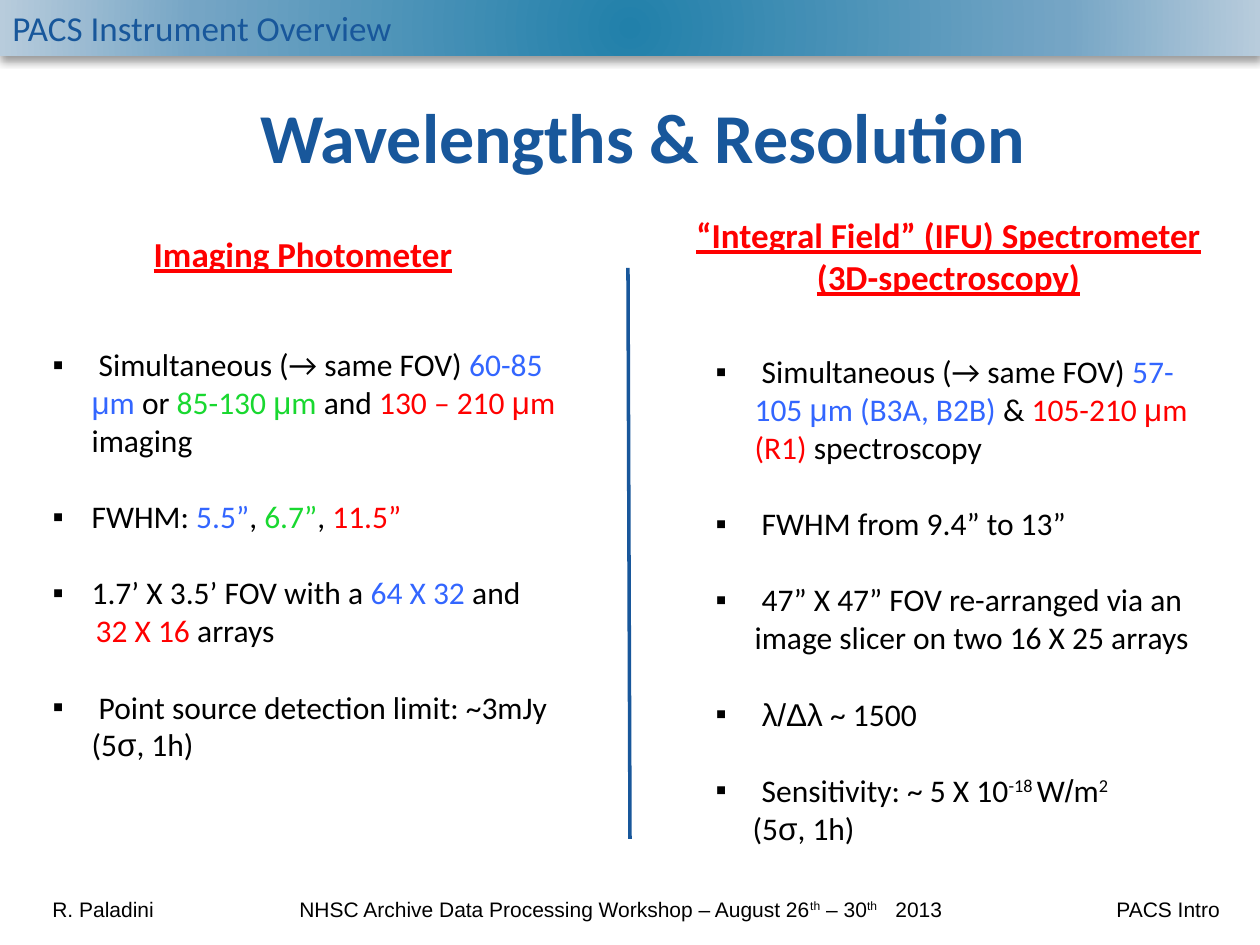
import itertools
from dataclasses import dataclass

import lxml.etree
import pptx
import pptx.dml.color
import pptx.enum.shapes
import pptx.enum.text
import pptx.oxml
import pptx.oxml.ns
import pptx.util


@dataclass(frozen=True)
class Theme:
    navy: str = "18579B"
    black: str = "000000"
    red: str = "FF0000"
    blue: str = "3366FF"
    green: str = "19D830"
    bar: tuple = ((0, "2180AA"), (69, "75A5C5"), (100, "B8CCDC"))
    text_font: str = "Calibri"
    plain_font: str = "Arial"
    title_size: int = 40
    heading_size: int = 20
    body_size: int = 18
    footer_size: int = 12
    item_gap: int = 22


THEME = Theme()
PX = 914400 / 126  # EMU in one px
SYMBOLS = set("μσλΔ/")  # set in the plain font
INDENT = 39


def px(length):
    return round(length * PX)


def rgb(code):
    return pptx.dml.color.RGBColor.from_string(code)


def xml(markup):
    namespaces = pptx.oxml.ns.nsdecls("a")
    return pptx.oxml.parse_xml(markup.replace(">", f" {namespaces}>", 1))


class SlideBuilder:
    def __init__(self, page, theme):
        self.page = page
        self.theme = theme

    def place(self, box, left, top, width, height, wrap=True):
        box.left, box.top, box.width, box.height = map(px, (left, top, width, height))
        frame = box.text_frame
        frame.word_wrap = wrap
        frame.auto_size = pptx.enum.text.MSO_AUTO_SIZE.NONE
        frame.vertical_anchor = pptx.enum.text.MSO_ANCHOR.TOP
        return frame

    def style(self, para, size, color, name=None, bold=False, underline=False, gap=0):
        font = para.font
        font.name = name or self.theme.text_font
        font.size = pptx.util.Pt(size)
        font.bold, font.underline = bold, underline
        font.color.rgb = rgb(color)
        para.space_before = pptx.util.Pt(gap)

    def spans(self, para, parts):
        """Each part is (text, colour or None, raised)."""
        for text, color, raised in parts:
            for symbol, letters in itertools.groupby(text, lambda c: c in SYMBOLS):
                span = para.add_run()
                span.text = "".join(letters)
                if symbol:
                    span.font.name = self.theme.plain_font
                if color:
                    span.font.color.rgb = rgb(color)
                if raised:
                    span._r.get_or_add_rPr().set("baseline", "30000")

    def paragraphs(self, frame, count):
        return [frame.paragraphs[0]] + [frame.add_paragraph() for _ in range(count - 1)]

    def heading(self, index, area, lines, size, color, underline=False, wrap=True):
        frame = self.place(self.page.placeholders[index], *area, wrap=wrap)
        for para, line in zip(self.paragraphs(frame, len(lines)), lines):
            para.text = line
            para.alignment = pptx.enum.text.PP_ALIGN.CENTER
            self.style(para, size, color, bold=True, underline=underline)

    def bullets(self, index, area, items):
        """Each item is (indent of an unbulleted line or None, parts)."""
        frame = self.place(self.page.placeholders[index], *area)
        for number, (para, (indent, parts)) in enumerate(
                zip(self.paragraphs(frame, len(items)), items)):
            bulleted = indent is None
            props = para._p.get_or_add_pPr()
            props.set("marL", str(px(INDENT if bulleted else indent)))
            props.set("indent", str(px(-INDENT if bulleted else 0)))
            if bulleted:
                props.append(xml(f'<a:buFont typeface="{self.theme.plain_font}"/>'.replace("/>", "></a:buFont>")))
                props.append(xml('<a:buChar char="▪"></a:buChar>'))
            else:
                props.append(xml("<a:buNone></a:buNone>"))
            gap = self.theme.item_gap if bulleted and number else 0
            self.style(para, self.theme.body_size, self.theme.black, gap=gap)
            self.spans(para, parts)

    def text(self, area, parts, size, color, name=None, tabs=()):
        frame = self.place(self.page.shapes.add_textbox(0, 0, 0, 0), *area)
        para = frame.paragraphs[0]
        if tabs:
            stops = "".join(f'<a:tab pos="{px(tab)}" algn="l"/>' for tab in tabs)
            para._p.get_or_add_pPr().append(xml(f"<a:tabLst>{stops}</a:tabLst>"))
        self.style(para, size, color, name)
        self.spans(para, parts)

    def bar(self, left, top, width, height):
        shape = self.page.shapes.add_shape(
            pptx.enum.shapes.MSO_SHAPE.RECTANGLE, *map(px, (left, top, width, height)))
        shape.line.fill.background()
        shape.shadow.inherit = False
        shape.fill.gradient()
        props = shape._element.spPr
        stops = "".join(f'<a:gs pos="{at * 1000}"><a:srgbClr val="{color}"/></a:gs>'
                        for at, color in self.theme.bar)
        rect = " ".join(f'{side}="100000"' for side in "ltrb")
        props.replace(props.find(pptx.oxml.ns.qn("a:gradFill")), xml(
            f'<a:gradFill rotWithShape="1"><a:gsLst>{stops}</a:gsLst>'
            f'<a:path path="circle"><a:fillToRect {rect}/></a:path></a:gradFill>'))
        props.find(pptx.oxml.ns.qn("a:effectLst")).append(xml(
            '<a:outerShdw blurRad="63500" dist="25400" dir="5400000" rotWithShape="0">'
            f'<a:srgbClr val="{self.theme.black}"><a:alpha val="40000"/></a:srgbClr>'
            '</a:outerShdw>'))

    def line(self, start, end, color, width):
        connector = self.page.shapes.add_connector(
            pptx.enum.shapes.MSO_CONNECTOR.STRAIGHT, *map(px, start + end))
        connector.line.color.rgb = rgb(color)
        connector.line.width = pptx.util.Pt(width)
        lxml.etree.SubElement(connector._element.spPr, pptx.oxml.ns.qn("a:effectLst"))


def plain(text, color=None):
    return text, color, False


def raised(text):
    return text, None, True


def main():
    deck = pptx.Presentation()
    deck.slide_width, deck.slide_height = px(1260), px(945)
    page = deck.slides.add_slide(deck.slide_layouts.get_by_name("Comparison"))
    slide = SlideBuilder(page, THEME)
    red, blue, green = THEME.red, THEME.blue, THEME.green

    # Top bar and title
    slide.bar(0, 0, 1260, 56)
    slide.text((0, 0, 663, 56), [plain("PACS Instrument Overview")],
               THEME.heading_size, THEME.navy)
    slide.heading(0, (-32, 87, 1349, 97), ["Wavelengths & Resolution"],
                  THEME.title_size, THEME.navy)

    # Photometer column
    slide.heading(1, (125, 226, 356, 55), ["Imaging Photometer"],
                  THEME.heading_size, red, underline=True)
    slide.bullets(2, (40, 339, 564, 509), [
        (None, [plain(" Simultaneous (→ same FOV) "), plain("60-85 μm ", blue),
                plain("or "), plain("85-130 μm ", green), plain("and "),
                plain("130 – 210 μm ", red), plain("imaging")]),
        (None, [plain("FWHM: "), plain("5.5”", blue), plain(", "),
                plain("6.7”", green), plain(", "), plain("11.5”", red)]),
        (None, [plain("1.7’ X 3.5’ FOV with a "), plain("64 X 32 ", blue), plain("and")]),
        (43, [plain("32 X 16 ", red), plain("arrays")]),
        (None, [plain(" Point source detection limit: ~3mJy (5σ, 1h)")]),
    ])

    # Spectrometer column
    slide.heading(3, (680, 207, 537, 97),
                  ["“Integral Field” (IFU) Spectrometer", "(3D-spectroscopy)"],
                  THEME.heading_size, red, underline=True, wrap=False)
    slide.bullets(4, (703, 346, 513, 509), [
        (None, [plain(" Simultaneous (→ same FOV) "), plain("57-105 μm (B3A, B2B) ", blue),
                plain("& "), plain("105-210 μm (R1) ", red), plain("spectroscopy")]),
        (None, [plain(" FWHM from 9.4” to 13”")]),
        (None, [plain(" 47” X 47” FOV re-arranged via an image slicer on two 16 X 25 arrays")]),
        (None, [plain(" λ/Δλ ~ 1500")]),
        (None, [plain(" Sensitivity: ~ 5 X 10"), raised("-18 "), plain("W/m"), raised("2")]),
        (37, [plain("(5σ, 1h)")]),
    ])

    # Column divider
    slide.line((628, 268), (630, 839), THEME.navy, 2)

    # Footer
    slide.text((40, 890, 1202, 38), [
        plain("R. Paladini\tNHSC Archive Data Processing Workshop – August 26"),
        raised("th"), plain(" – 30"), raised("th"), plain("\t2013\tPACS Intro"),
    ], THEME.footer_size, THEME.black, THEME.plain_font, tabs=(247, 843, 1064))

    deck.save("out.pptx")


if __name__ == "__main__":
    main()
